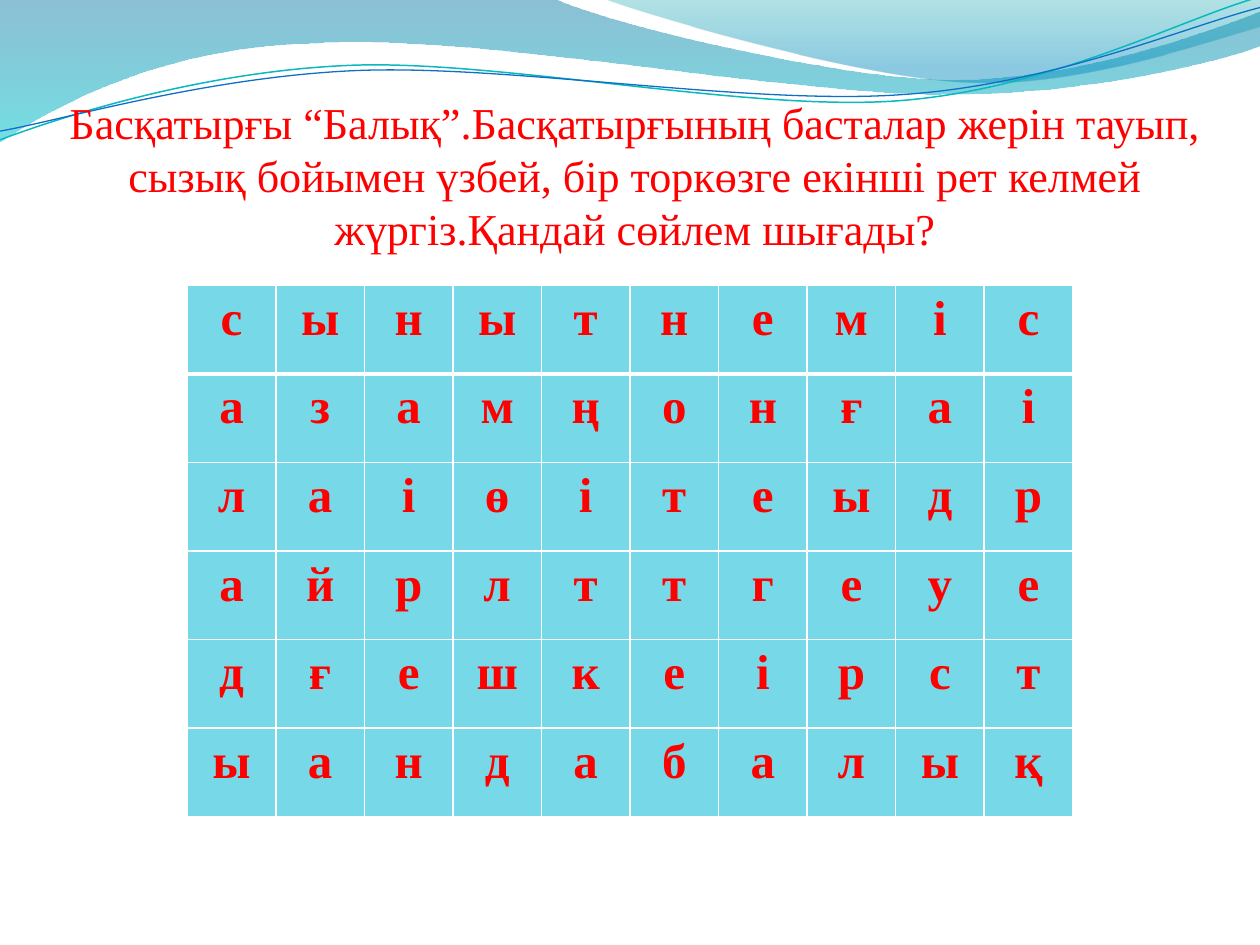
from lxml import etree
from pptx import Presentation
from pptx.dml.color import RGBColor
from pptx.enum.text import MSO_ANCHOR, PP_ALIGN
from pptx.oxml.ns import qn
from pptx.util import Pt

CENTER = PP_ALIGN.CENTER
BOTTOM = MSO_ANCHOR.BOTTOM
FONT = "Times New Roman"
RED, WHITE, CELL_FILL = "FF0000", "FFFFFF", "77D9E8"

TASK = ("Басқатырғы “Балық”.Басқатырғының басталар жерін тауып, "
        "сызық бойымен үзбей, бір торкөзге екінші рет келмей "
        "жүргіз.Қандай сөйлем шығады?")
LETTER_ROWS = ["сынытнеміс", "азамңонғаі", "лаіөітеыдр",
               "айрлттгеуе", "дғешкеірст", "ыандабалық"]

# Paths in points: two numbers are a corner, six are a cubic curve
WIDE_WAVE = [(0, 0), (316.8, -0.7),
             (342.7, 12.2, 478.1, 45.4, 545.8, 45.4),
             (614.2, 45.4, 689.8, 18.7, 720, 6.5), (720.7, 25.9),
             (707.8, 31.7, 626.4, 54.7, 537.1, 54),
             (447.8, 54, 275, 20.2, 185, 24.5),
             (92.9, 25.9, 33.1, 59.8, -0.7, 81.4)]
RIGHT_WAVE = [(344.9, -0.7),
              (366.5, 7.9, 491, 44.6, 553.7, 46.8),
              (616.3, 49.7, 691.9, 23, 720, 15.1), (720, 0)]
TEAL_CURVE = [(0, 79.9),
              (34.6, 67, 113.8, 41, 199.4, 37.4),
              (284.4, 33.8, 427, 64.1, 513.4, 57.6),
              (599.8, 51.1, 675.4, 10.8, 718.6, -1.4)]
BLUE_CURVE = [(0, 74.9),
              (33.8, 69.1, 118.1, 43.9, 203.8, 40.3),
              (290.2, 36.7, 429.8, 60.5, 516.2, 54),
              (601.9, 48.2, 677.5, 15.1, 720, 4.3)]


def color(hex_code):
    return RGBColor.from_string(hex_code)


def add_outline(slide, path, close):
    """Join the end points, then bend the six-number segments into curves."""
    start, *ends = [(Pt(segment[-2]), Pt(segment[-1])) for segment in path]
    builder = slide.shapes.build_freeform(*start)
    builder.add_line_segments(ends, close=close)
    outline = builder.convert_to_shape()
    outline.shadow.inherit = False
    sides = list(outline._element.iter(qn("a:lnTo")))
    for side, segment in zip(sides, path[1:]):
        if len(segment) == 6:
            side.tag = qn("a:cubicBezTo")
            for index in (0, 1):
                x, y = segment[2 * index:2 * index + 2]
                handle = etree.Element(qn("a:pt"), x=str(Pt(x) - outline.left),
                                       y=str(Pt(y) - outline.top))
                side.insert(index, handle)
    return outline


def add_wave(slide, path, stops):
    """Filled wave; stops are (position, colour, opacity percent)."""
    wave = add_outline(slide, path, True)
    wave.line.fill.background()
    wave.fill.gradient()
    wave.fill.gradient_angle = 270
    for stop, (position, hex_code, _) in zip(wave.fill.gradient_stops, stops):
        stop.position = position
        stop.color.rgb = color(hex_code)
    tints = wave._element.spPr.iter(qn("a:srgbClr"))
    for tint, (_, _, opacity) in zip(tints, stops):
        etree.SubElement(tint, qn("a:alpha"), val=str(opacity * 1000))


def add_curve(slide, path, hex_code, width):
    curve = add_outline(slide, path, False)
    curve.fill.background()
    curve.line.color.rgb = color(hex_code)
    curve.line.width = Pt(width)


def style_text(paragraph, size, bold=False):
    paragraph.alignment = CENTER
    paragraph.font.name = FONT
    paragraph.font.size = Pt(size)
    paragraph.font.bold = bold
    paragraph.font.color.rgb = color(RED)


def add_task(slide):
    box = slide.shapes.add_textbox(Pt(36), Pt(55.4), Pt(653.8), Pt(90))
    frame = box.text_frame
    frame.word_wrap = True
    frame.vertical_anchor = BOTTOM
    frame.margin_left = frame.margin_right = frame.margin_bottom = 0
    frame.text = TASK
    style_text(frame.paragraphs[0], 25.2)


def set_borders(cell, top, bottom):
    properties = cell._tc.get_or_add_tcPr()
    for side, width in (("L", 1), ("R", 1), ("T", top), ("B", bottom)):
        border = etree.SubElement(properties, qn(f"a:ln{side}"), w=str(Pt(width)))
        fill = etree.SubElement(border, qn("a:solidFill"))
        etree.SubElement(fill, qn("a:srgbClr"), val=WHITE)


def add_letter_grid(slide, left, top, cell_size):
    rows, columns = len(LETTER_ROWS), len(LETTER_ROWS[0])
    grid = slide.shapes.add_table(rows, columns, Pt(left), Pt(top),
                                  Pt(columns * cell_size), Pt(rows * cell_size)).table
    for column in grid.columns:
        column.width = Pt(cell_size)
    for index, letters in enumerate(LETTER_ROWS):
        grid.rows[index].height = Pt(cell_size)
        for cell, letter in zip(grid.rows[index].cells, letters):
            cell.text = letter
            style_text(cell.text_frame.paragraphs[0], 28, bold=True)
            # The first row is set off by a thicker rule
            set_borders(cell, top=3 if index == 1 else 1, bottom=3 if index == 0 else 1)
            cell.fill.solid()
            cell.fill.fore_color.rgb = color(CELL_FILL)


def main():
    deck = Presentation()
    deck.slide_width, deck.slide_height = Pt(720), Pt(540)
    slide = deck.slides.add_slide(deck.slide_layouts[6])

    # Waves along the top
    add_wave(slide, WIDE_WAVE, [(0, "0074A1", 45), (1, "00C6CF", 55)])
    add_wave(slide, RIGHT_WAVE, [(0, "00A1A9", 30), (0.8, "008BBF", 45)])
    add_curve(slide, TEAL_CURVE, "0AB8BF", 0.85)
    add_curve(slide, BLUE_CURVE, "0F6FC6", 0.75)

    # Puzzle
    add_task(slide)
    add_letter_grid(slide, 107, 163.1, 50.6)
    deck.save("out.pptx")


if __name__ == "__main__":
    main()
